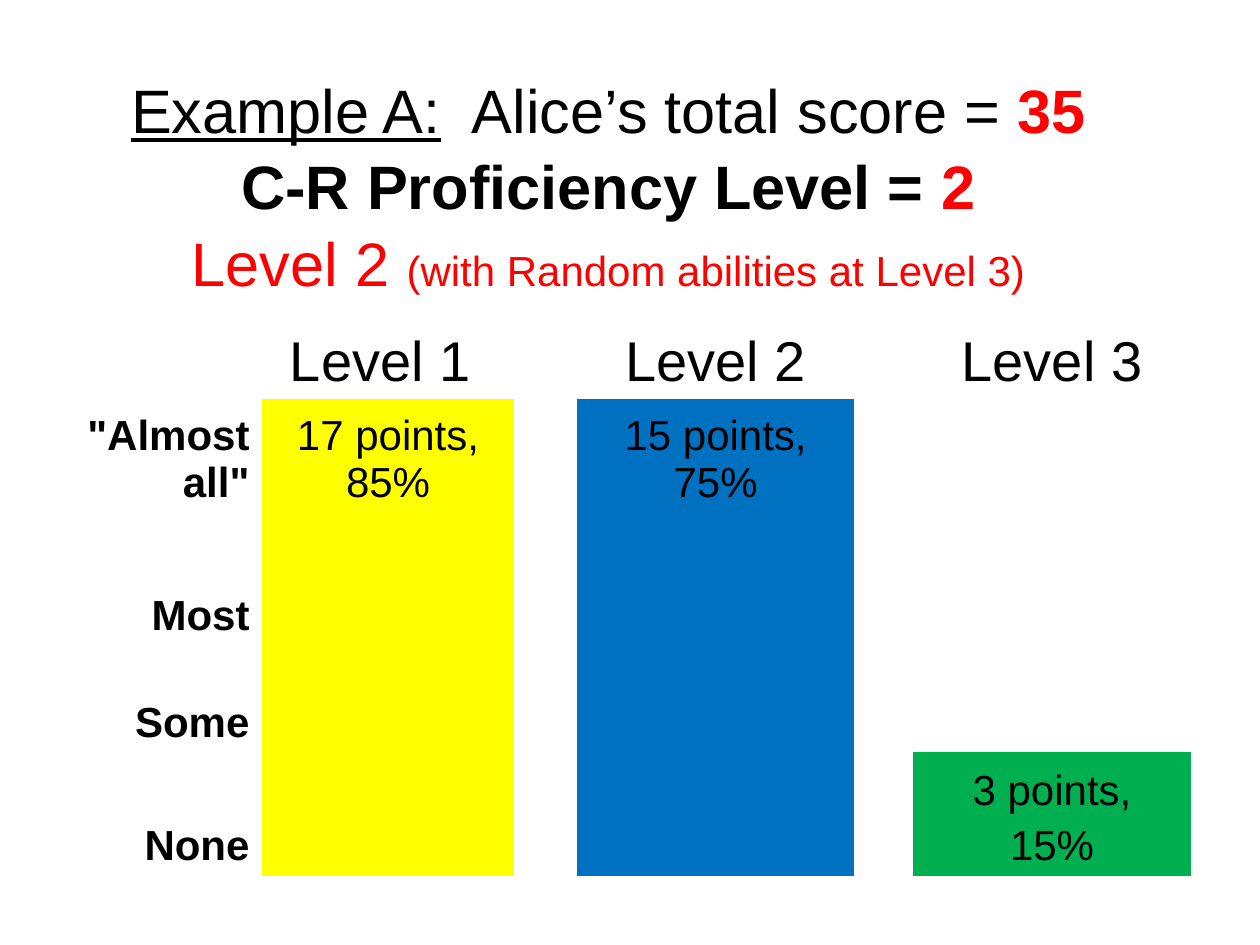
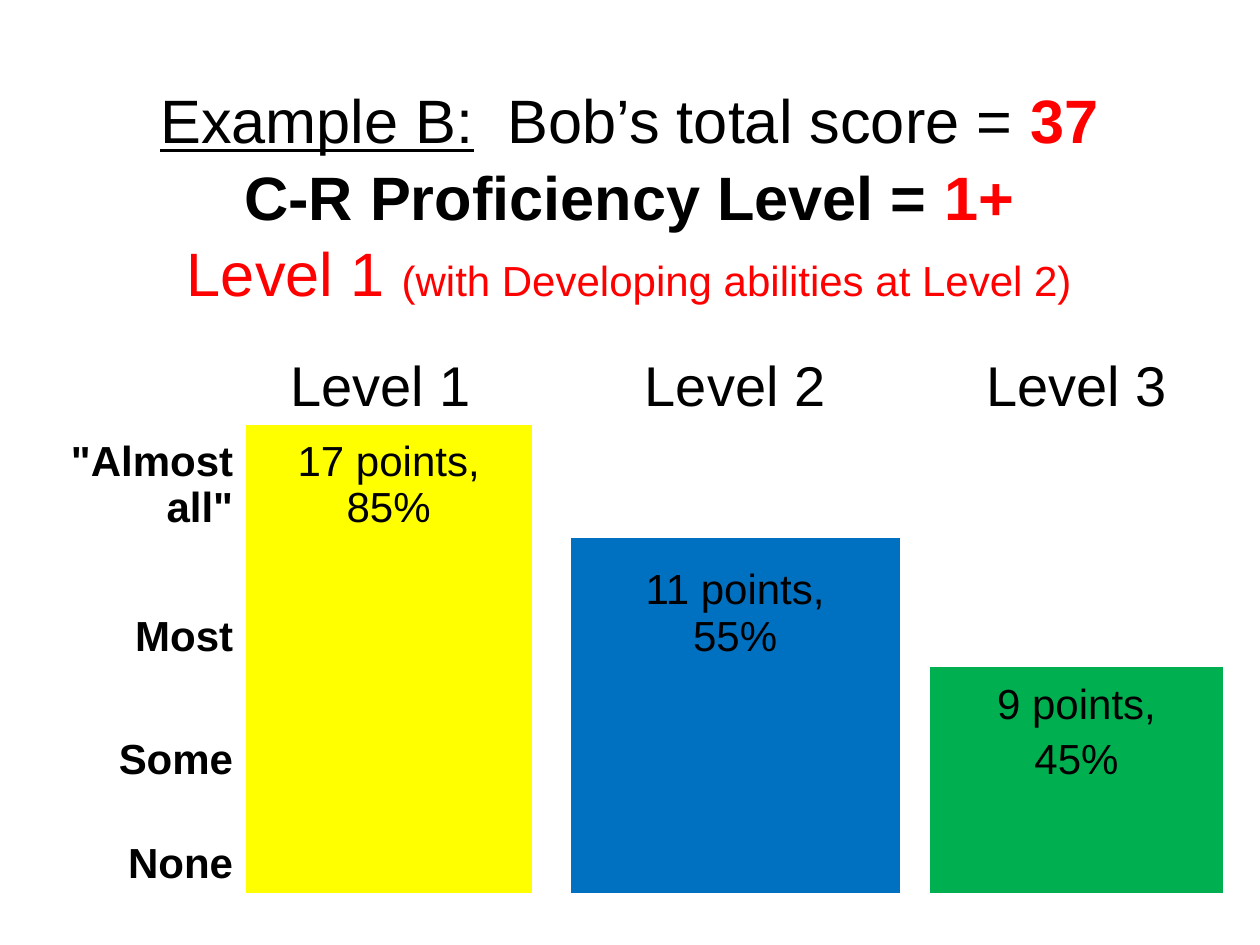
import pptx
import pptx.util
import pptx.dml.color
import pptx.enum.text
import lxml.etree
from pptx.util import Inches

# Theme: colours, type sizes and font
class theme:
    font = "Arial"
    black = "000000"
    red = "FF0000"
    bars = ["FFFF00", "0070C0", "00B050"]
    title = 35
    head = 32
    body = 24

NONE = "{2D5ABB26-0587-4C30-8999-92F81FD0307C}"  # no style, no grid
ALIGN = pptx.enum.text.PP_ALIGN
ANCHOR = pptx.enum.text.MSO_ANCHOR
HEADS = ["Level 1 ", "Level 2", "Level 3"]
MARKS = ['"Almost all"', "Most", "Some", "None"]

# Each bar is its top row, points and percent
slides = [
    dict(case="Example A:", who="  Alice’s total score = ", score="35", level="2",
         main="Level 2 ", note="(with Random abilities at Level 3)",
         title=(0.58, 0.5, 8.5, 1.92), spot=(0.58, 2.19),
         cols=[1.5, 2, 0.5, 2.2, 0.47, 2.2], rows=[0.98, 0.9, 1.05, 0.85, 0.98],
         bars=[(1, "17 points,", "85%"), (1, "15 points,", "75%"), (4, "3 points,", "15%")]),
    dict(case="Example B:", who="  Bob’s total score = ", score="37", level="1+",
         main="Level 1 ", note="(with Developing abilities at Level 2)",
         title=(0.58, 0.5, 8.83, 2.08), spot=(0.25, 2.42),
         cols=[1.7, 2.27, 0.31, 2.61, 0.23, 2.33], rows=[0.95, 0.9, 1.02, 0.98, 0.82],
         bars=[(1, "17 points,", "85%"), (2, "11 points,", "55%"), (3, "9 points,", "45%")]),
]


def say(para, text, size, color=theme.black, bold=False, line=False):
    run = para.add_run()
    run.text = text
    run.font.name = theme.font
    run.font.size = pptx.util.Pt(size)
    run.font.bold = bold
    run.font.underline = line
    run.font.color.rgb = pptx.dml.color.RGBColor.from_string(color)


def write(cell, lines, size, align=ALIGN.CENTER, bold=False, gap=0):
    for n, text in enumerate(lines):
        para = cell.text_frame.add_paragraph() if n else cell.text_frame.paragraphs[0]
        para.alignment = align
        if n:
            para.space_before = pptx.util.Pt(gap)
        say(para, text, size, bold=bold)


deck = pptx.Presentation()
deck.slide_width, deck.slide_height = Inches(10), Inches(7.5)

for data in slides:
    slide = deck.slides.add_slide(deck.slide_layouts[6])

    # Title in three lines
    frame = slide.shapes.add_textbox(*map(Inches, data["title"])).text_frame
    frame.word_wrap = True
    frame.vertical_anchor = ANCHOR.MIDDLE
    para = frame.paragraphs[0]
    para.alignment = ALIGN.CENTER
    para.line_spacing = 1.04
    say(para, data["case"], theme.title, line=True)
    say(para, data["who"], theme.title)
    say(para, data["score"], theme.title, theme.red, bold=True)
    para.add_line_break()
    say(para, "C-R Proficiency Level = ", theme.title, bold=True)
    say(para, data["level"], theme.title, theme.red, bold=True)
    para.add_line_break()
    say(para, data["main"], theme.title, theme.red)
    say(para, data["note"], theme.body, theme.red)

    # Table with plain cells
    cols, rows = data["cols"], data["rows"]
    size = (sum(cols), sum(rows))
    table = slide.shapes.add_table(len(rows), len(cols),
                                   *map(Inches, data["spot"] + size)).table
    table.first_row = table.horz_banding = False
    table._tbl.tblPr.find(pptx.oxml.ns.qn("a:tableStyleId")).text = NONE
    for col, width in zip(table.columns, cols):
        col.width = Inches(width)
    for row, height in zip(table.rows, rows):
        row.height = Inches(height)
    for cell in table.iter_cells():
        cell.vertical_anchor = ANCHOR.BOTTOM
        props = cell._tc.get_or_add_tcPr()
        for side in ("lnL", "lnR", "lnT", "lnB"):
            edge = lxml.etree.SubElement(props, pptx.oxml.ns.qn("a:" + side), w="0")
            lxml.etree.SubElement(edge, pptx.oxml.ns.qn("a:noFill"))
        cell.fill.background()

    # Scale down the left side
    for row, mark in enumerate(MARKS, 1):
        write(table.cell(row, 0), [mark], theme.body, ALIGN.RIGHT, bold=True)

    # Heads and bars in every second column
    for n, (top, points, share) in enumerate(data["bars"]):
        col = 1 + 2 * n
        write(table.cell(0, col), [HEADS[n]], theme.head)
        write(table.cell(top, col), [points, share], theme.body, gap=4.8 if n == 2 else 0)
        for row in range(top, len(rows)):
            fill = table.cell(row, col).fill
            fill.solid()
            fill.fore_color.rgb = pptx.dml.color.RGBColor.from_string(theme.bars[n])

deck.save("out.pptx")
